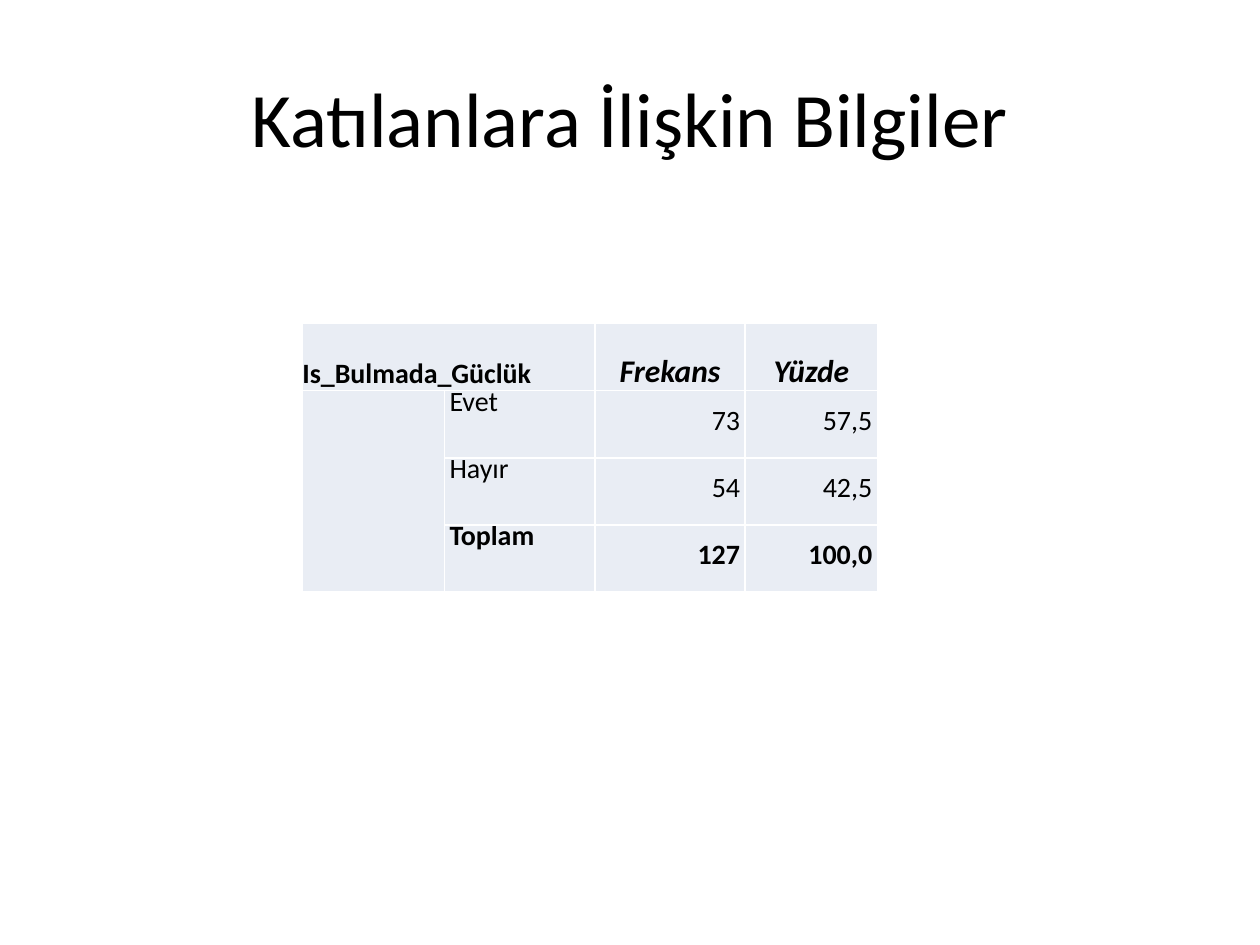
from lxml import etree
from pptx import Presentation
from pptx.dml.color import RGBColor
from pptx.enum import text
from pptx.oxml import ns
from pptx.util import Pt


def rgb(h):
    return RGBColor.from_string(h)


def add_borders(cell, color, width):
    tcPr = cell._tc.get_or_add_tcPr()
    for i, side in enumerate(("lnL", "lnR", "lnT", "lnB")):
        ln = etree.Element(ns.qn("a:" + side), w=str(Pt(width)))
        fill = etree.SubElement(ln, ns.qn("a:solidFill"))
        etree.SubElement(fill, ns.qn("a:srgbClr"), val=color)
        tcPr.insert(i, ln)


prs = Presentation()
prs.slide_width, prs.slide_height = Pt(720), Pt(540)
s = prs.slides.add_slide(prs.slide_layouts[6])
mid, top, bottom = text.MSO_ANCHOR.MIDDLE, text.MSO_ANCHOR.TOP, text.MSO_ANCHOR.BOTTOM
left, center, right = text.PP_ALIGN.LEFT, text.PP_ALIGN.CENTER, text.PP_ALIGN.RIGHT

# Title
tf = s.shapes.add_textbox(Pt(36), Pt(21.6), Pt(648), Pt(90)).text_frame
tf.word_wrap = True
tf.vertical_anchor = mid
p = tf.paragraphs[0]
p.text = "Katılanlara İlişkin Bilgiler"
p.alignment = center
p.font.name, p.font.size = "Calibri", Pt(44)
p.font.color.rgb = rgb("000000")

# Frequency table
rows = [
    ("Is_Bulmada_Güclük", "", "Frekans", "Yüzde"),
    ("", "Evet", "73", "57,5"),
    ("", "Hayır", "54", "42,5"),
    ("", "Toplam", "127", "100,0"),
]
col_widths = [81.1, 86, 86, 75.6]
row_height = 38.3
table = s.shapes.add_table(len(rows), len(col_widths), Pt(172.8), Pt(185),
                           Pt(sum(col_widths)), Pt(row_height * len(rows))).table
for col, w in zip(table.columns, col_widths):
    col.width = Pt(w)
for row in table.rows:
    row.height = Pt(row_height)

for r, values in enumerate(rows):
    for c, value in enumerate(values):
        cell = table.cell(r, c)
        cell.fill.solid()
        cell.fill.fore_color.rgb = rgb("E9EDF4")
        add_borders(cell, "FFFFFF", 1)
        cell.margin_top = cell.margin_bottom = 0
        cell.margin_left = cell.margin_right = Pt(3 if c else 0)
        if not value:
            continue
        header, number = r == 0, c >= 2
        cell.vertical_anchor = bottom if header else mid if number else top
        p = cell.text_frame.paragraphs[0]
        p.text = value
        p.alignment = left if not number else center if header else right
        p.line_spacing = Pt(16) if c else 1.15
        p.font.name = "Calibri"
        p.font.size = Pt(18 if header and number else 16)
        p.font.bold = header or r == len(rows) - 1
        p.font.italic = header and number
        p.font.color.rgb = rgb("000000")

# Merged heading and empty side column
table.cell(0, 0).merge(table.cell(0, 1))
table.cell(1, 0).merge(table.cell(3, 0))

prs.save("out.pptx")
